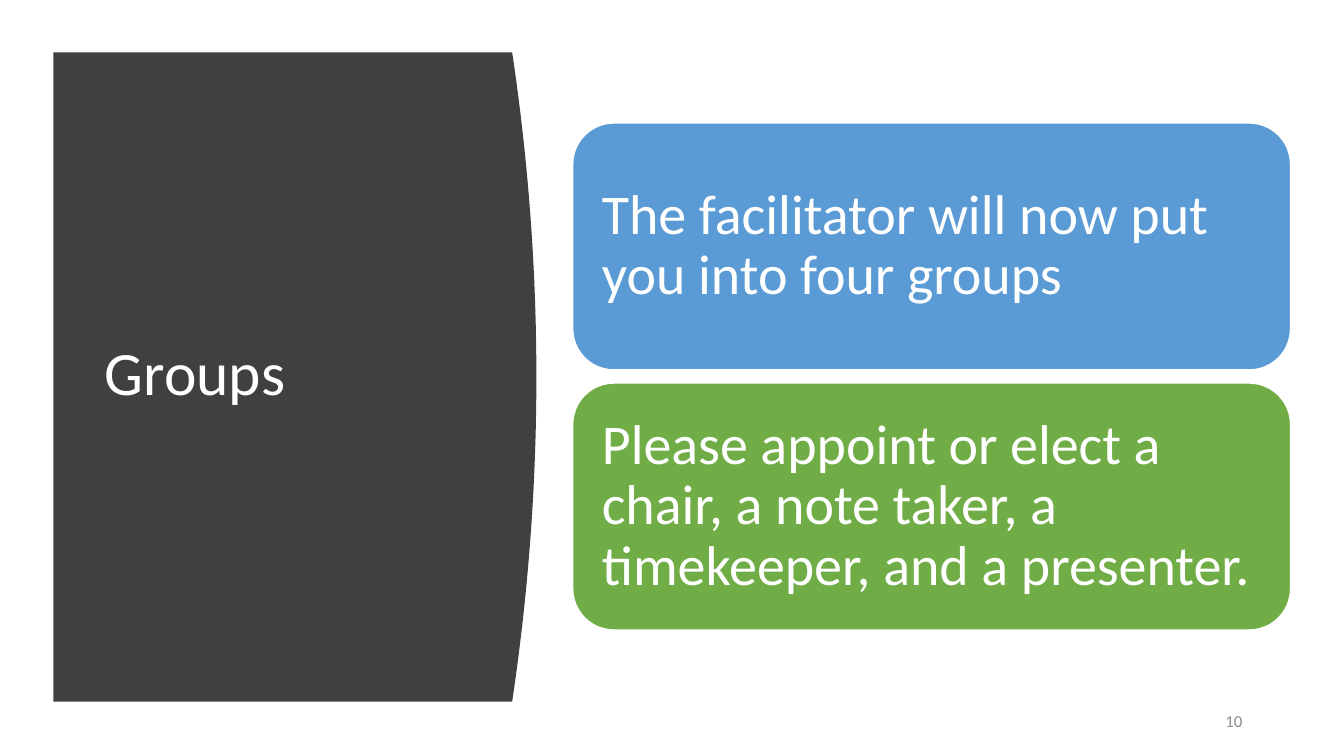
from pptx import Presentation
from pptx.dml.color import RGBColor as Rgb
from pptx.enum.shapes import MSO_SHAPE as Shape
from pptx.enum.text import MSO_ANCHOR as Anchor, MSO_AUTO_SIZE as Fit, PP_ALIGN as Align
from pptx.util import Inches, Pt

COLORS = {"dark": "404040", "blue": "5B9BD5", "green": "70AD47",
          "white": "FFFFFF", "gray": "8C8C8C"}
CARDS = [
    ("The facilitator will now put you into four groups", "blue"),
    ("Please appoint or elect a chair, a note taker, a timekeeper, and a presenter.", "green"),
]


def color(name):
    """Return the named colour."""
    return Rgb.from_string(COLORS[name])


def write(shape, text, size, tint, align=Align.LEFT, line=0.9, after=0):
    """Put one formatted paragraph into a shape."""
    frame = shape.text_frame
    frame.text = text
    frame.word_wrap = True
    frame.auto_size = Fit.NONE
    frame.vertical_anchor = Anchor.MIDDLE
    para = frame.paragraphs[0]
    para.alignment = align
    para.line_spacing = line
    para.space_after = Pt(after)
    font = para.runs[0].font
    font.name = "Calibri"
    font.size = Pt(size)
    font.color.rgb = color(tint)


def panel(slide, left, top, width, height, bulge=0.24, steps=40):
    """Draw the dark panel with a bowed right edge, and its title."""
    edge = []
    for step in range(steps + 1):
        part = step / steps
        bow = bulge * (1 - (2 * part - 1) ** 2)
        edge.append((Inches(left + width - bulge + bow), Inches(top + height * part)))
    build = slide.shapes.build_freeform(Inches(left), Inches(top), scale=1.0)
    build.add_line_segments(edge + [(Inches(left), Inches(top + height))], close=True)
    back = build.convert_to_shape()
    back.shadow.inherit = False
    back.fill.solid()
    back.fill.fore_color.rgb = color("dark")
    back.line.fill.background()

    title = slide.shapes.title
    title.left, title.top = Inches(left + 0.41), Inches(top + 0.59)
    title.width, title.height = Inches(3.74), Inches(5.24)
    write(title, "Groups", 44, "white")
    slide.shapes.element.append(title.element)


def cards(slide, left, top, width, height, gap=0.13):
    """Stack the rounded cards evenly in the box."""
    tall = (height - gap * (len(CARDS) - 1)) / len(CARDS)
    for row, (text, tint) in enumerate(CARDS):
        card = slide.shapes.add_shape(
            Shape.ROUNDED_RECTANGLE, Inches(left), Inches(top + row * (tall + gap)),
            Inches(width), Inches(tall))
        card.shadow.inherit = False
        card.fill.solid()
        card.fill.fore_color.rgb = color(tint)
        card.line.color.rgb = color("white")
        card.line.width = Pt(1)
        frame = card.text_frame
        frame.margin_left = frame.margin_right = Inches(0.17)
        frame.margin_top = frame.margin_bottom = Inches(0.17)
        write(card, text, 40, "white")


def number(slide, left, top, width, height):
    """Place the page number."""
    box = slide.shapes.add_textbox(Inches(left), Inches(top), Inches(width), Inches(height))
    write(box, "10", 12, "gray", align=Align.RIGHT, line=1.0, after=6)


def main():
    """Build and save the slide."""
    deck = Presentation()
    deck.slide_width, deck.slide_height = Inches(13.33), Inches(7.5)
    slide = deck.slides.add_slide(deck.slide_layouts[5])
    panel(slide, 0.53, 0.52, 4.79, 6.44)
    number(slide, 11.73, 6.95, 0.69, 0.4)
    cards(slide, 5.68, 1.22, 7.12, 5.03)
    deck.save("out.pptx")


if __name__ == "__main__":
    main()
